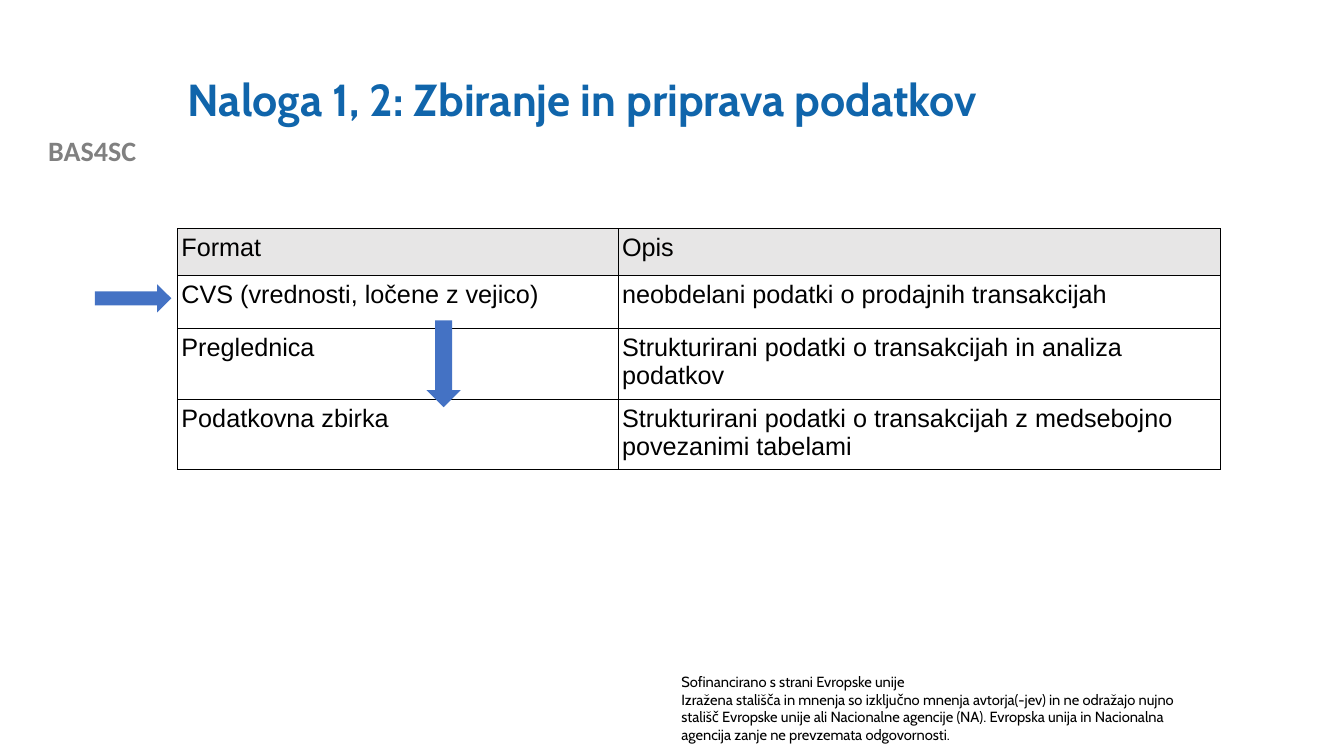
"""Build the slide on collecting and preparing data."""
from lxml import etree
from pptx import Presentation
from pptx import util as u
from pptx.dml.color import RGBColor
from pptx.enum import shapes, text
from pptx.oxml import ns

TITLE = "Naloga 1, 2: Zbiranje in priprava podatkov"
LABEL = "BAS4SC"
NOTICE = [
    "Sofinancirano s strani Evropske unije",
    "Izražena stališča in mnenja so izključno mnenja avtorja(-jev) in ne odražajo nujno "
    "stališč Evropske unije ali Nacionalne agencije (NA). Evropska unija in Nacionalna "
    "agencija zanje ne prevzemata odgovornosti.",
]
ROWS = [
    ("Format", "Opis"),
    ("CVS (vrednosti, ločene z vejico)", "neobdelani podatki o prodajnih transakcijah"),
    ("Preglednica", "Strukturirani podatki o transakcijah in analiza podatkov"),
    ("Podatkovna zbirka",
     "Strukturirani podatki o transakcijah z medsebojno povezanimi tabelami"),
]
WIDTHS = [4.37, 5.97]
HEIGHTS = [0.46, 0.53, 0.53, 0.53]
ARROWS = [
    (shapes.MSO_SHAPE.RIGHT_ARROW, (0.94, 2.82, 0.76, 0.28)),
    (shapes.MSO_SHAPE.DOWN_ARROW, (4.23, 3.18, 0.34, 0.86)),
]
COLORS = {"title": "1065AB", "label": "808080", "ink": "000000",
          "paper": "FFFFFF", "head": "E7E6E6", "arrow": "4472C4"}


def color(name):
    return RGBColor.from_string(COLORS[name])


def place(*box):
    return [u.Inches(n) for n in box]


def style(para, face, size, name, bold=False):
    font = para.font
    font.name, font.size, font.bold = face, u.Pt(size), bold
    font.color.rgb = color(name)


def border(cell):
    props = cell._tc.get_or_add_tcPr()
    for spot, side in enumerate(("a:lnL", "a:lnR", "a:lnT", "a:lnB")):
        line = etree.Element(ns.qn(side), w=str(u.Pt(0.57)))
        fill = etree.SubElement(line, ns.qn("a:solidFill"))
        etree.SubElement(fill, ns.qn("a:srgbClr"), val=COLORS["ink"])
        props.insert(spot, line)


def add_shape(slide, kind, box, fill):
    shape = slide.shapes.add_shape(kind, *place(*box))
    shape.shadow.inherit = False
    shape.fill.solid()
    shape.fill.fore_color.rgb = color(fill)
    shape.line.fill.background()
    return shape


def add_title(slide):
    title = slide.shapes.title
    title.left, title.top, title.width, title.height = place(1.76, 0.4, 10.66, 1.22)
    frame = title.text_frame
    frame.text = TITLE
    frame.vertical_anchor = text.MSO_ANCHOR.MIDDLE
    para = frame.paragraphs[0]
    para.alignment = text.PP_ALIGN.LEFT
    para.line_spacing = 0.9
    style(para, "Cabin", 32, "title", True)


def add_label(slide):
    frame = slide.shapes.add_textbox(*place(0, 1.28, 1.83, 0.43)).text_frame
    frame.word_wrap = True
    frame.text = LABEL
    para = frame.paragraphs[0]
    para.alignment = text.PP_ALIGN.CENTER
    style(para, "Calibri", 20, "label", True)


def add_notice(slide):
    box = add_shape(slide, shapes.MSO_SHAPE.RECTANGLE, (6.66, 6.62, 5.43, 0.81), "paper")
    box.line.color.rgb = color("paper")
    box.line.width = u.Pt(0.75)
    frame = box.text_frame
    frame.word_wrap = True
    frame.vertical_anchor = text.MSO_ANCHOR.MIDDLE
    frame.text = "\n".join(NOTICE)
    for para in frame.paragraphs:
        para.alignment = text.PP_ALIGN.LEFT
        style(para, "Cabin", 10.5, "ink")


def add_table(slide):
    box = place(1.76, 2.27, sum(WIDTHS), sum(HEIGHTS))
    table = slide.shapes.add_table(len(ROWS), len(WIDTHS), *box).table
    for col, width in zip(table.columns, WIDTHS):
        col.width = u.Inches(width)
    for r, (row, height) in enumerate(zip(ROWS, HEIGHTS)):
        table.rows[r].height = u.Inches(height)
        for c, words in enumerate(row):
            cell = table.cell(r, c)
            cell.text = words
            cell.margin_left = cell.margin_right = u.Inches(0.04)
            if r == 0:
                cell.fill.solid()
                cell.fill.fore_color.rgb = color("head")
            else:
                cell.fill.background()
            border(cell)
            style(cell.text_frame.paragraphs[0], "Arial", 18, "ink")


def main():
    deck = Presentation()
    deck.slide_width, deck.slide_height = place(13.33, 7.5)
    slide = deck.slides.add_slide(deck.slide_layouts[5])
    add_label(slide)
    add_notice(slide)
    add_title(slide)
    add_table(slide)
    for kind, box in ARROWS:
        add_shape(slide, kind, box, "arrow")
    deck.save("out.pptx")


if __name__ == "__main__":
    main()
